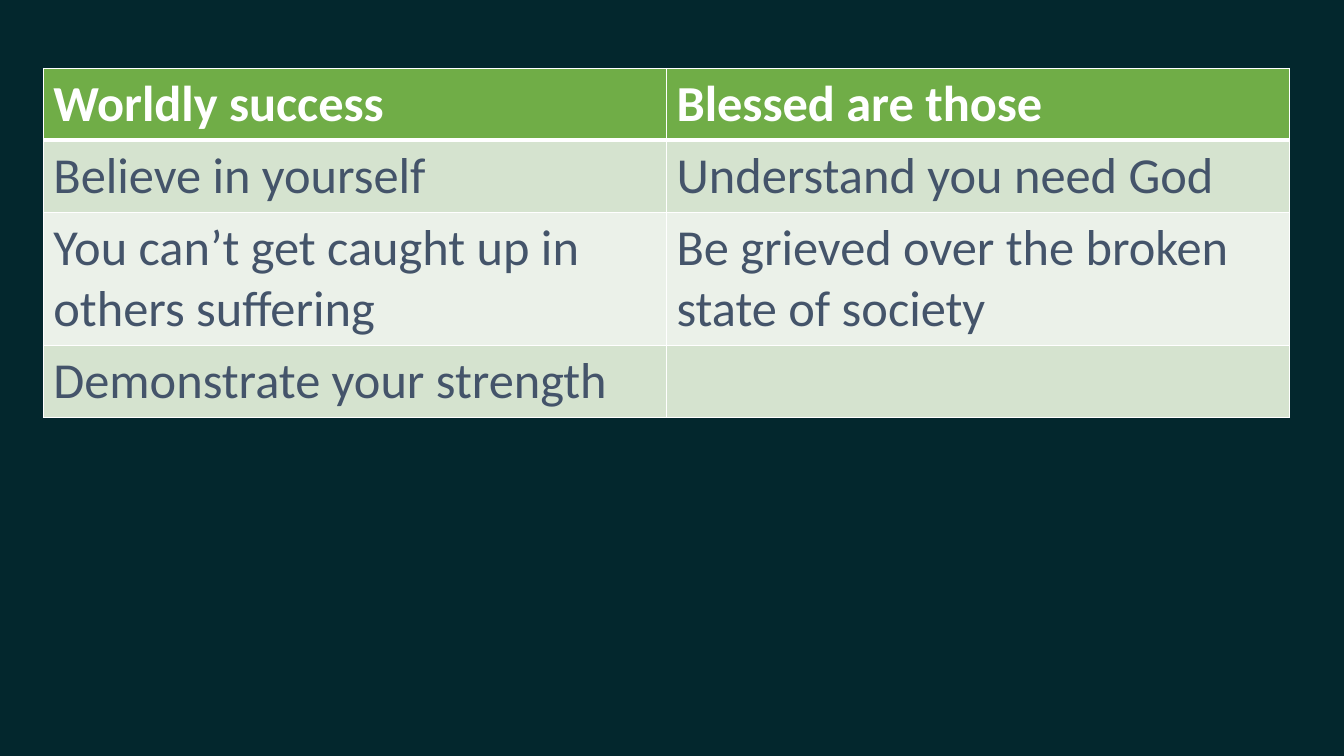
from dataclasses import dataclass

from lxml import etree
from pptx import Presentation
from pptx.dml.color import RGBColor
from pptx.oxml import ns
from pptx.util import Inches, Pt


@dataclass(frozen=True)
class Theme:
    background: str = "03272D"
    header_fill: str = "70AD47"
    band_fills: tuple = ("D5E3CF", "EBF1E9")
    header_text: str = "FFFFFF"
    body_text: str = "44546A"
    border: str = "FFFFFF"
    border_width: float = 1
    header_rule_width: float = 3
    font: str = "Calibri"
    text_size: float = 36


THEME = Theme()

ROWS = [
    ("Worldly success", "Blessed are those"),
    ("Believe in yourself", "Understand you need God"),
    ("You can’t get caught up in others suffering",
     "Be grieved over the broken state of society"),
    ("Demonstrate your strength", ""),
]
ROW_HEIGHTS = (0.71, 0.71, 1.32, 0.71)
COLUMN_WIDTH = 6.18


def set_borders(cell, top_width, bottom_width):
    properties = cell._tc.get_or_add_tcPr()
    widths = {"lnL": THEME.border_width, "lnR": THEME.border_width,
              "lnT": top_width, "lnB": bottom_width}
    for side, width in widths.items():
        line = etree.SubElement(properties, ns.qn(f"a:{side}"), w=str(Pt(width)))
        fill = etree.SubElement(line, ns.qn("a:solidFill"))
        etree.SubElement(fill, ns.qn("a:srgbClr"), val=THEME.border)


def set_cell_text(cell, content, color, bold):
    cell.text_frame.text = content
    paragraph = cell.text_frame.paragraphs[0]
    for font in [paragraph.font] + [run.font for run in paragraph.runs]:
        font.name = THEME.font
        font.size = Pt(THEME.text_size)
        font.bold = bold
        font.color.rgb = RGBColor.from_string(color)


def style_cell(cell, content, row_index):
    """Apply the header style to row 0 and alternating bands below it."""
    is_header = row_index == 0
    set_borders(
        cell,
        THEME.header_rule_width if row_index == 1 else THEME.border_width,
        THEME.header_rule_width if is_header else THEME.border_width,
    )
    bands = THEME.band_fills
    fill = THEME.header_fill if is_header else bands[(row_index - 1) % len(bands)]
    cell.fill.solid()
    cell.fill.fore_color.rgb = RGBColor.from_string(fill)
    color = THEME.header_text if is_header else THEME.body_text
    set_cell_text(cell, content, color, is_header)


def add_comparison_table(slide, left, top):
    column_count = len(ROWS[0])
    table = slide.shapes.add_table(
        len(ROWS), column_count, Inches(left), Inches(top),
        Inches(COLUMN_WIDTH * column_count), Inches(sum(ROW_HEIGHTS)),
    ).table
    for row_index, (contents, height) in enumerate(zip(ROWS, ROW_HEIGHTS)):
        table.rows[row_index].height = Inches(height)
        for column_index, content in enumerate(contents):
            style_cell(table.cell(row_index, column_index), content, row_index)


def main():
    presentation = Presentation()
    presentation.slide_width = Inches(13.33)
    presentation.slide_height = Inches(7.5)
    slide = presentation.slides.add_slide(presentation.slide_layouts[6])
    background = slide.background.fill
    background.solid()
    background.fore_color.rgb = RGBColor.from_string(THEME.background)
    add_comparison_table(slide, 0.43, 0.68)
    presentation.save("out.pptx")


if __name__ == "__main__":
    main()
